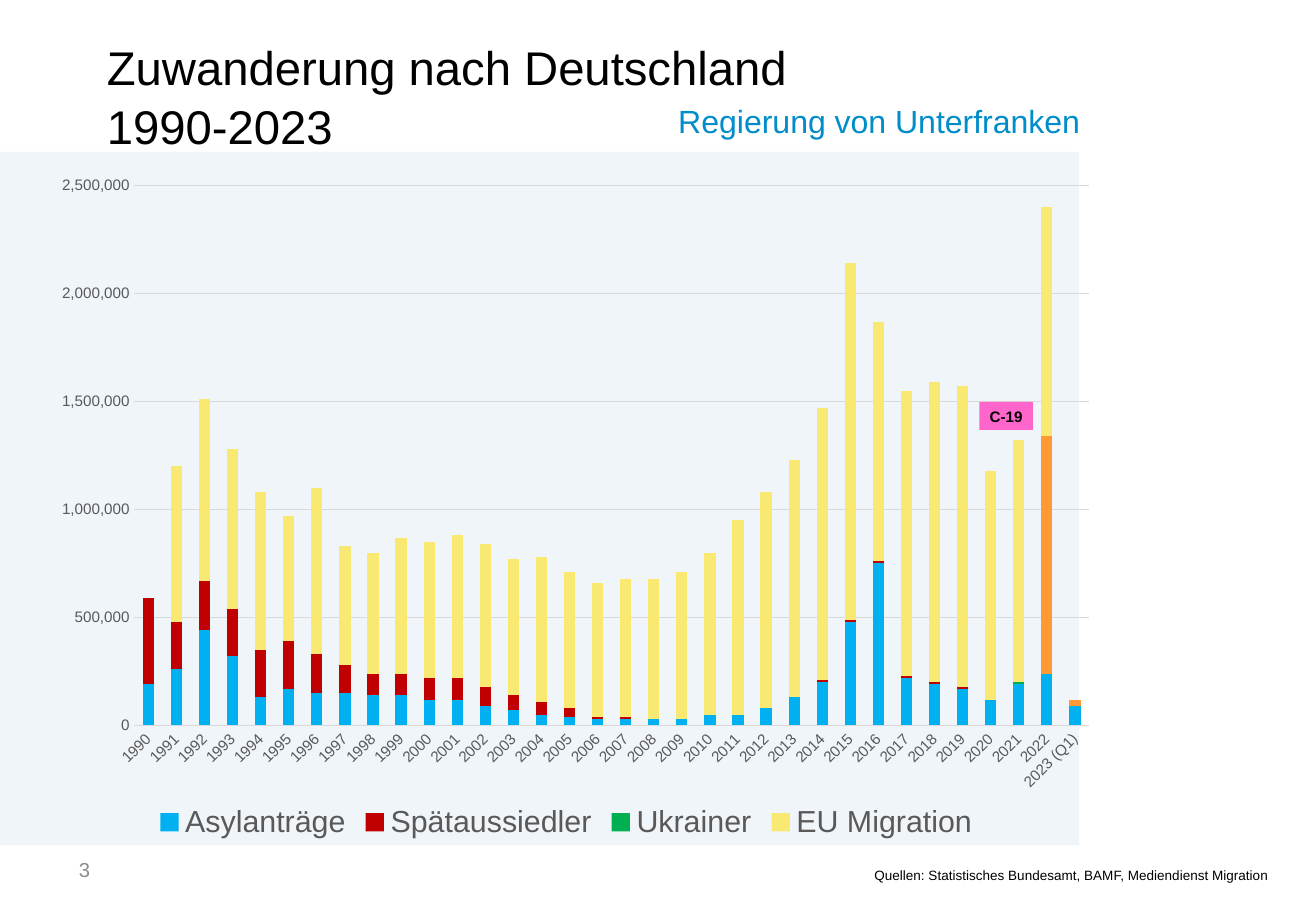
from dataclasses import dataclass, field

from lxml import etree
from pptx import Presentation
from pptx.chart.data import CategoryChartData
from pptx.dml.color import RGBColor
from pptx.enum.chart import XL_CHART_TYPE, XL_LEGEND_POSITION, XL_TICK_MARK
from pptx.enum.shapes import MSO_SHAPE
from pptx.enum.text import MSO_ANCHOR, MSO_AUTO_SIZE, PP_ALIGN
from pptx.oxml import parse_xml
from pptx.oxml.ns import nsdecls, qn
from pptx.util import Inches, Pt

STACKED = XL_CHART_TYPE.COLUMN_STACKED
BOTTOM_LEGEND = XL_LEGEND_POSITION.BOTTOM
NO_TICKS = XL_TICK_MARK.NONE
RECTANGLE = MSO_SHAPE.RECTANGLE
TOP, MIDDLE, BOTTOM = MSO_ANCHOR.TOP, MSO_ANCHOR.MIDDLE, MSO_ANCHOR.BOTTOM
LEFT, CENTER, RIGHT = PP_ALIGN.LEFT, PP_ALIGN.CENTER, PP_ALIGN.RIGHT
FONT = "Arial"
BLACK, AXIS_TEXT, GRID = "000000", "595959", "D9D9D9"


@dataclass
class Migration:
    """One group of arrivals, in thousands per year."""
    name: str
    color: str
    thousands: list[int | None]
    point_colors: dict[int, str] = field(default_factory=dict)


YEARS = [str(year) for year in range(1990, 2023)] + ["2023 (Q1)"]
MIGRATIONS = [
    Migration("Asylanträge", "00B0F0", [
        190, 260, 440, 320, 130, 170, 150, 150, 140, 140, 120, 120, 90, 70, 50, 40, 30,
        30, 30, 30, 50, 50, 80, 130, 200, 480, 750, 220, 190, 170, 120, 190, 240, 90]),
    Migration("Spätaussiedler", "C00000", [
        400, 220, 230, 220, 220, 220, 180, 130, 100, 100, 100, 100, 90, 70, 60, 40, 10,
        10, 0, 0, 0, 0, 0, 0, 10, 10, 10, 10, 10, 10, 0, None, None, None]),
    Migration("Ukrainer", "00B050", [None] * 31 + [10, 1100, 30],
              {32: "FF9933", 33: "FF9933"}),
    Migration("EU Migration", "F9E973", [
        None, 720, 840, 740, 730, 580, 770, 550, 560, 630, 630, 660, 660, 630, 670, 630,
        620, 640, 650, 680, 750, 900, 1000, 1100, 1260, 1650, 1110, 1320, 1390, 1390,
        1060, 1120, 1060, None]),
]


def rgb(color: str) -> RGBColor:
    return RGBColor.from_string(color)


def box(left: float, top: float, width: float, height: float) -> list[int]:
    return [Inches(length) for length in (left, top, width, height)]


def format_font(font, size: float, color: str, bold: bool = False) -> None:
    font.name, font.size, font.bold = FONT, Pt(size), bold
    font.color.rgb = rgb(color)


def write(shape, text: str, *, size: float, color: str = BLACK, bold: bool = False,
          align=LEFT, anchor=TOP, wrap: bool = True, right_inset: float = 0.1,
          spacing: float = 1.0) -> None:
    frame = shape.text_frame
    frame.auto_size = MSO_AUTO_SIZE.NONE
    frame.word_wrap, frame.vertical_anchor = wrap, anchor
    frame.margin_right = Inches(right_inset)
    frame.text = text
    paragraph = frame.paragraphs[0]
    paragraph.alignment, paragraph.line_spacing = align, spacing
    format_font(paragraph.font, size, color, bold)


def add_rectangle(slide, color: str, bounds: list[int]):
    rectangle = slide.shapes.add_shape(RECTANGLE, *bounds)
    rectangle.shadow.inherit = False
    rectangle.fill.solid()
    rectangle.fill.fore_color.rgb = rgb(color)
    rectangle.line.fill.background()
    return rectangle


def paint(element, color: str) -> None:
    element.format.fill.solid()
    element.format.fill.fore_color.rgb = rgb(color)


def place_plot(chart, x: float, y: float, width: float, height: float) -> None:
    """Fix the inner plot area as fractions of the chart."""
    plot_area = chart.plots[0]._element.getparent()
    for previous in plot_area.findall(qn("c:layout")):
        plot_area.remove(previous)
    layout = parse_xml(f"<c:layout {nsdecls('c')}><c:manualLayout/></c:layout>")
    settings = {"layoutTarget": "inner", "xMode": "edge", "yMode": "edge",
                "x": x, "y": y, "w": width, "h": height}
    for tag, value in settings.items():
        etree.SubElement(layout[0], qn(f"c:{tag}")).set("val", str(value))
    plot_area.insert(0, layout)


def format_axis(axis) -> None:
    axis.major_tick_mark = axis.minor_tick_mark = NO_TICKS
    format_font(axis.tick_labels.font, 9, AXIS_TEXT)


def add_migration_chart(slide) -> None:
    data = CategoryChartData(number_format="#,##0")
    data.categories = YEARS
    for migration in MIGRATIONS:
        data.add_series(migration.name, [
            None if count is None else count * 1000 for count in migration.thousands])
    bounds = box(0.15, 1.29, 9.02, 5.67)
    chart = slide.shapes.add_chart(STACKED, *bounds, data).chart
    chart.has_title = False
    format_font(chart.font, 10, BLACK)

    plot = chart.plots[0]
    plot.gap_width, plot.overlap, plot.vary_by_categories = 150, 100, False
    for series, migration in zip(plot.series, MIGRATIONS):
        paint(series, migration.color)
        series.invert_if_negative = False
        for index, color in migration.point_colors.items():
            paint(series.points[index], color)

    years, people = chart.category_axis, chart.value_axis
    format_axis(years)
    years.format.line.color.rgb = rgb(GRID)
    years.format.line.width = Pt(0.75)
    years._element.find(qn("c:txPr")).find(qn("a:bodyPr")).set("rot", "-2700000")

    format_axis(people)
    people.minimum_scale, people.maximum_scale, people.major_unit = 0, 2500000, 500000
    people.format.line.fill.background()
    people.tick_labels.number_format = "#,##0"
    people.tick_labels.number_format_is_linked = False
    people.major_gridlines.format.line.color.rgb = rgb(GRID)
    people.major_gridlines.format.line.width = Pt(0.75)

    chart.has_legend = True
    chart.legend.position = BOTTOM_LEGEND
    chart.legend.include_in_layout = False
    format_font(chart.legend.font, 18, AXIS_TEXT)
    place_plot(chart, 0.106, 0.042, 0.871, 0.784)


def main() -> None:
    presentation = Presentation()
    presentation.slide_width, presentation.slide_height = Inches(10.83), Inches(7.5)
    slide = presentation.slides.add_slide(presentation.slide_layouts[5])

    add_rectangle(slide, "F0F5FA", box(-0.01, 1.25, 8.89, 5.71))
    authority = slide.shapes.add_textbox(*box(5.21, 0.77, 3.68, 0.43))
    write(authority, "Regierung von Unterfranken", size=19, color="008DC9",
          align=RIGHT, anchor=BOTTOM, wrap=False, right_inset=0)
    add_migration_chart(slide)

    title = slide.shapes.title
    title.left, title.top, title.width, title.height = box(0.78, 0.24, 9.21, 1.25)
    write(title, "Zuwanderung nach Deutschland\v1990-2023", size=28, spacing=1.05)

    page_number = slide.shapes.add_textbox(*box(0.05, 6.96, 0.79, 0.4))
    write(page_number, "3", size=12, color="8C8C8C", align=RIGHT, anchor=MIDDLE)
    pandemic = add_rectangle(slide, "FF66CC", box(8.06, 3.31, 0.44, 0.23))
    write(pandemic, "C-19", size=9, bold=True, align=CENTER, anchor=MIDDLE, wrap=False)
    sources = slide.shapes.add_textbox(*box(5.24, 7.09, 5.3, 0.24))
    write(sources, "Quellen: Statistisches Bundesamt, BAMF, Mediendienst Migration",
          size=8, align=RIGHT)

    presentation.save("out.pptx")


if __name__ == "__main__":
    main()
